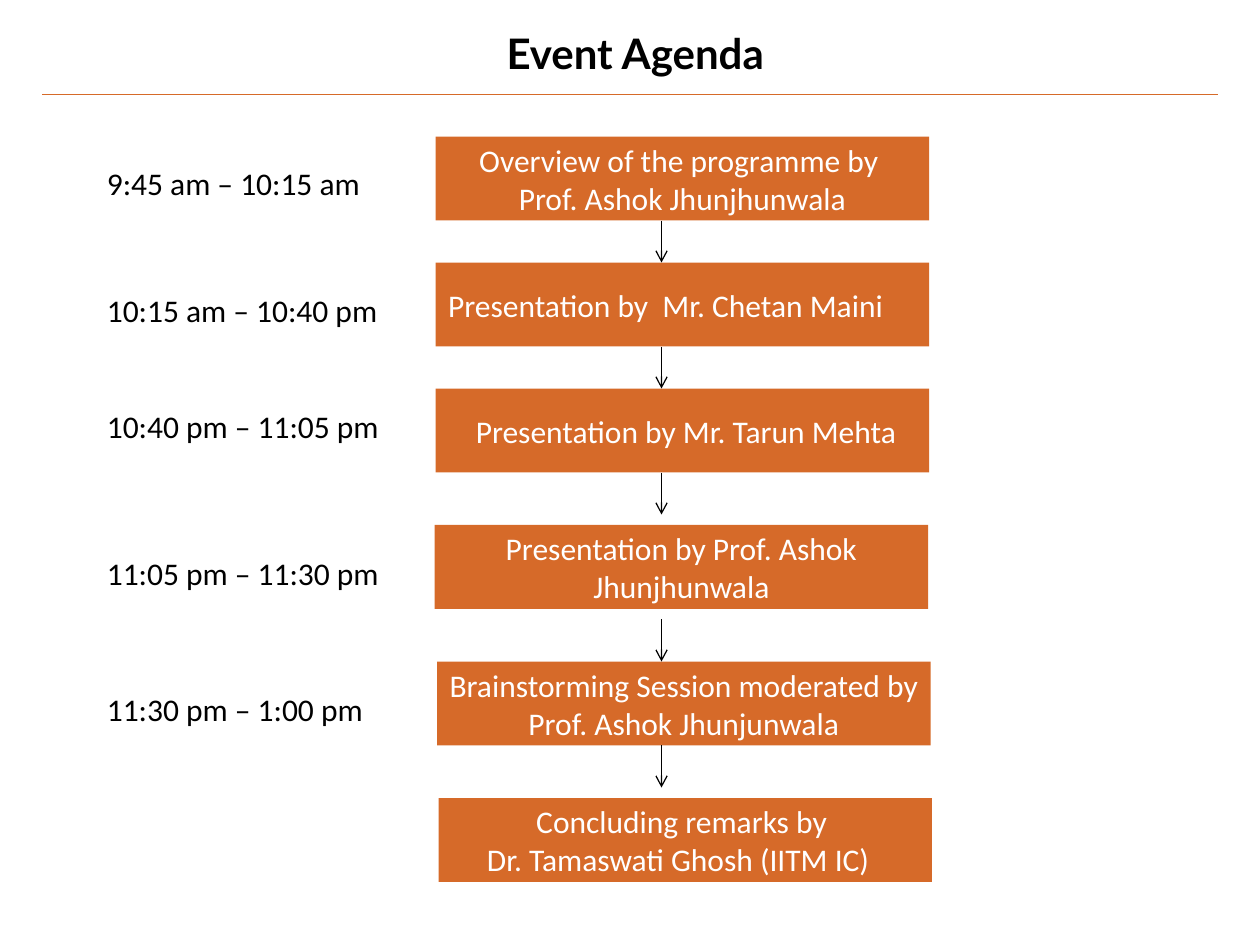
from lxml import etree
from pptx import Presentation
from pptx.dml.color import RGBColor
from pptx.enum import shapes, text
from pptx.oxml.ns import qn
from pptx.util import Pt

COLORS = {"orange": "D66A29", "white": "FFFFFF", "black": "000000"}
TITLE = "Event Agenda"
# time, time top, box left, box top, alignment, lines
AGENDA = [
    ("9:45 am – 10:15 am", 90, 249, 78, "CENTER",
     ["Overview of the programme by ", "Prof. Ashok Jhunjhunwala"]),
    ("10:15 am – 10:40 pm", 162.7, 249, 150, "LEFT",
     ["Presentation by  Mr. Chetan Maini"]),
    ("10:40 pm – 11:05 pm", 229, 249, 222, "CENTER",
     [" Presentation by Mr. Tarun Mehta"]),
    ("11:05 pm – 11:30 pm", 313, 248.4, 300, "CENTER",
     ["Presentation by Prof. Ashok Jhunjhunwala"]),
    ("11:30 pm – 1:00 pm", 391, 249.8, 378, "CENTER",
     ["Brainstorming Session moderated by Prof. Ashok Jhunjunwala"]),
    (None, None, 250.6, 456, "CENTER",
     ["Concluding remarks by ", "Dr. Tamaswati Ghosh (IITM IC)  "]),
]
BOX_W, BOX_H = 282, 48
TIME_X, TIME_W, TIME_H = 54, 172, 29
ARROW_X, ARROW_LEN = 378, 24
ARROW_TOPS = [126, 198, 270, 354, 426]


def rgb(name):
    return RGBColor.from_string(COLORS[name])


def fill(sp, color, alpha=None):
    sp.fill.solid()
    sp.fill.fore_color.rgb = rgb(color)
    if alpha:
        clr = sp._element.spPr.find(qn("a:solidFill"))[0]
        etree.SubElement(clr, qn("a:alpha")).set("val", str(alpha * 1000))


def write(sp, lines, color, align="LEFT", font="Calibri", size=18, bold=False):
    tf = sp.text_frame
    for i, line in enumerate(lines):
        p = tf.add_paragraph() if i else tf.paragraphs[0]
        p.alignment = text.PP_ALIGN[align]
        r = p.add_run()
        r.text = line
        r.font.name, r.font.size, r.font.bold = font, Pt(size), bold
        r.font.color.rgb = rgb(color)
    return tf


def add_line(s, x1, y1, x2, y2, color, arrow=False):
    c = s.shapes.add_connector(shapes.MSO_CONNECTOR.STRAIGHT,
                               Pt(x1), Pt(y1), Pt(x2), Pt(y2))
    c.line.color.rgb = rgb(color)
    c.line.width = Pt(0.75)
    if arrow:
        ln = c.line._get_or_add_ln()
        etree.SubElement(ln, qn("a:tailEnd")).set("type", "arrow")
    etree.SubElement(c._element.spPr, qn("a:effectLst"))


def main():
    prs = Presentation()
    prs.slide_width, prs.slide_height = Pt(720), Pt(540)
    s = prs.slides.add_slide(prs.slide_layouts[5])

    # Title and rule
    title = s.shapes.title
    title.left, title.top, title.width, title.height = Pt(234), Pt(12), Pt(258), Pt(36)
    fill(title, "white", 80)
    tf = write(title, [TITLE], "black", "CENTER", "Lato", 24, True)
    tf.vertical_anchor = text.MSO_ANCHOR.TOP
    tf.auto_size = text.MSO_AUTO_SIZE.SHAPE_TO_FIT_TEXT
    add_line(s, 696, 54, 24, 54, "orange")

    # Sessions with their times
    for time, time_y, x, y, align, lines in AGENDA:
        box = s.shapes.add_shape(shapes.MSO_SHAPE.RECTANGLE,
                                 Pt(x), Pt(y), Pt(BOX_W), Pt(BOX_H))
        box.shadow.inherit = False
        fill(box, "orange")
        box.line.fill.background()
        tf = write(box, lines, "white", align)
        tf.word_wrap = True
        tf.vertical_anchor = text.MSO_ANCHOR.MIDDLE
        if time:
            label = s.shapes.add_textbox(Pt(TIME_X), Pt(time_y), Pt(TIME_W), Pt(TIME_H))
            fill(label, "white", 79)
            tf = write(label, [time], "black")
            tf.word_wrap = False
            tf.auto_size = text.MSO_AUTO_SIZE.SHAPE_TO_FIT_TEXT

    # Arrows between sessions
    for y in ARROW_TOPS:
        add_line(s, ARROW_X, y, ARROW_X, y + ARROW_LEN, "black", arrow=True)

    prs.save("out.pptx")


if __name__ == "__main__":
    main()
